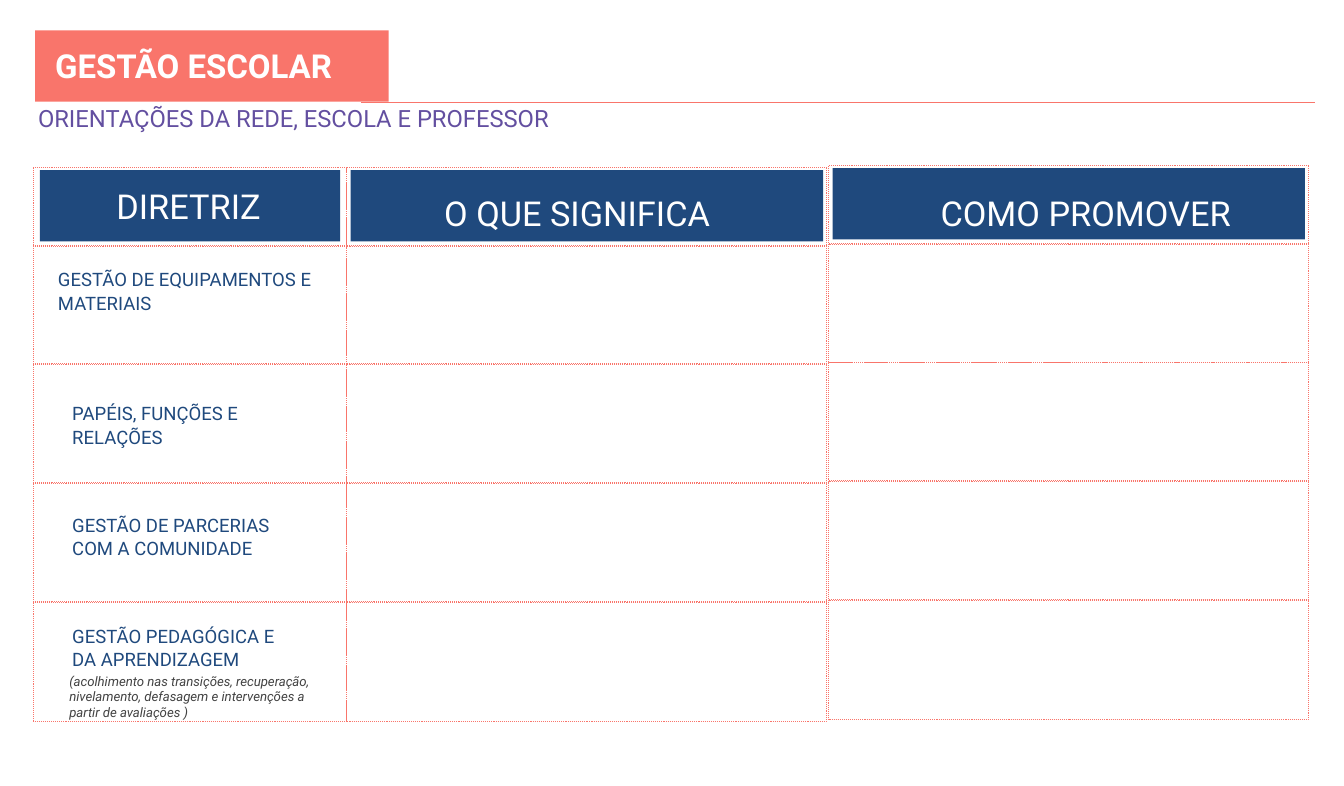
from dataclasses import dataclass

from lxml.etree import SubElement
from pptx import Presentation
from pptx.dml.color import RGBColor
from pptx.enum.dml import MSO_LINE
from pptx.enum.shapes import MSO_CONNECTOR, MSO_SHAPE
from pptx.enum.text import MSO_ANCHOR, MSO_AUTO_SIZE, PP_ALIGN
from pptx.oxml.ns import qn
from pptx.util import Inches, Pt

COLORS = {
    "coral": "F9756B",
    "navy": "1F497D",
    "purple": "634FA0",
    "gray": "434343",
    "white": "FFFFFF",
}
FONT = "Roboto"
HEADER_H, HEADER_STEP, BAR_H = 0.83, 0.82, 0.75
ROW_H, ROW_STEP, ROWS = 1.26, 1.25, 4


@dataclass
class Box:
    x: float
    y: float
    w: float
    h: float

    def lengths(self) -> list[Inches]:
        return [Inches(v) for v in (self.x, self.y, self.w, self.h)]


@dataclass
class Column:
    x: float
    y: float
    w: float
    bar_inset: float


@dataclass
class Label:
    text: str
    box: Box
    size: int
    color: str
    left: float = 0
    top: float = 0.15
    right: float = 0
    align: PP_ALIGN = PP_ALIGN.LEFT
    spacing: float = 1.06
    bold: bool = False
    italic: bool = False


COLUMNS = [
    Column(0.35, 1.76, 3.3, 0.07),
    Column(3.65, 1.76, 5.05, 0.04),
    Column(8.72, 1.74, 5.05, 0.04),
]
HEADERS = [
    Label("DIRETRIZ", Box(0.5, 1.77, 2.97, 0.55), 26, "white", align=PP_ALIGN.CENTER),
    Label("O QUE SIGNIFICA", Box(3.77, 1.85, 4.26, 0.47), 26, "white",
          left=0.35, align=PP_ALIGN.CENTER),
    Label("COMO PROMOVER", Box(9.12, 1.85, 4.26, 0.47), 26, "white",
          left=0.35, align=PP_ALIGN.CENTER),
]
GUIDELINES = [
    ("GESTÃO DE EQUIPAMENTOS E MATERIAIS", Box(0.33, 2.66, 3.61, 0.75)),
    ("PAPÉIS, FUNÇÕES E RELAÇÕES", Box(0.48, 4.07, 2.89, 0.75)),
    ("GESTÃO DE PARCERIAS COM A COMUNIDADE", Box(0.48, 5.24, 2.89, 0.75)),
    ("GESTÃO PEDAGÓGICA E DA APRENDIZAGEM", Box(0.48, 6.41, 2.89, 0.75)),
]
NOTE = Label(
    "\n".join([
        "(acolhimento nas transições, recuperação,",
        "nivelamento, defasagem e intervenções a",
        "partir de avaliações )",
    ]),
    Box(0.72, 7.07, 2.83, 0.41), 10, "gray",
    left=0.01, top=0.01, spacing=1, italic=True)
TITLE = Label("GESTÃO ESCOLAR", Box(0.58, 0.47, 7.85, 0.69), 25, "white",
              top=0.01, spacing=1, bold=True)
SUBTITLE = Label("ORIENTAÇÕES DA REDE, ESCOLA E PROFESSOR",
                 Box(0.39, 1.08, 6.83, 0.69), 18, "purple",
                 left=0.01, top=0.01, spacing=1)


def rgb(name: str) -> RGBColor:
    return RGBColor.from_string(COLORS[name])


def set_all(target, values: dict) -> None:
    for name, value in values.items():
        setattr(target, name, value)


def write_label(sp, label: Label) -> None:
    """Place a text box or placeholder and format its text."""
    set_all(sp, dict(zip(("left", "top", "width", "height"), label.box.lengths())))
    tf = sp.text_frame
    set_all(tf, {
        "word_wrap": True,
        "auto_size": MSO_AUTO_SIZE.NONE,
        "vertical_anchor": MSO_ANCHOR.TOP,
        "margin_left": Inches(label.left),
        "margin_top": Inches(label.top),
        "margin_right": Inches(label.right),
        "margin_bottom": 0,
    })
    p = tf.paragraphs[0]
    p.text = label.text
    set_all(p, {"alignment": label.align, "line_spacing": label.spacing,
                "space_before": Pt(0)})
    for r in p.runs:
        set_all(r.font, {"name": FONT, "size": Pt(label.size),
                         "bold": label.bold, "italic": label.italic})
        r.font.color.rgb = rgb(label.color)


def add_label(slide, label: Label) -> None:
    write_label(slide.shapes.add_textbox(*label.box.lengths()), label)


def add_rect(slide, box: Box):
    sp = slide.shapes.add_shape(MSO_SHAPE.RECTANGLE, *box.lengths())
    sp.shadow.inherit = False
    return sp


def add_bar(slide, box: Box, color: str):
    sp = add_rect(slide, box)
    sp.fill.solid()
    sp.fill.fore_color.rgb = rgb(color)
    sp.line.fill.background()
    return sp


def add_cell(slide, box: Box) -> None:
    sp = add_rect(slide, box)
    sp.fill.background()
    sp.line.color.rgb = rgb("coral")
    set_all(sp.line, {"width": Pt(0.75), "dash_style": MSO_LINE.ROUND_DOT})


def add_column(slide, col: Column) -> None:
    add_cell(slide, Box(col.x, col.y, col.w, HEADER_H))
    for i in range(ROWS):
        y = col.y + HEADER_STEP + i * ROW_STEP
        add_cell(slide, Box(col.x, y, col.w, ROW_H))
    add_bar(slide, Box(col.x + col.bar_inset, col.y + 0.03,
                       col.w - 2 * col.bar_inset, BAR_H), "navy")


def add_rule(slide, x1: float, x2: float, y: float) -> None:
    line = slide.shapes.add_connector(
        MSO_CONNECTOR.STRAIGHT, Inches(x1), Inches(y), Inches(x2), Inches(y))
    line.line.color.rgb = rgb("coral")
    line.line.width = Pt(0.75)
    SubElement(line.element.spPr, qn("a:effectLst"))


def main() -> None:
    prs = Presentation()
    set_all(prs, {"slide_width": Inches(14.14), "slide_height": Inches(8.27)})
    slide = prs.slides.add_slide(prs.slide_layouts.get_by_name("Section Header"))

    title, subtitle = slide.placeholders
    banner = add_bar(slide, Box(0.37, 0.32, 3.72, 0.75), "coral")
    title.element.addprevious(banner.element)
    write_label(title, TITLE)
    write_label(subtitle, SUBTITLE)
    add_rule(slide, 3.8, 13.83, 1.08)

    for col in COLUMNS:
        add_column(slide, col)
    for header in HEADERS:
        add_label(slide, header)
    for text, box in GUIDELINES:
        add_label(slide, Label(text, box, 14, "navy", left=0.28, right=0.35))
    add_label(slide, NOTE)

    prs.save("out.pptx")


if __name__ == "__main__":
    main()
